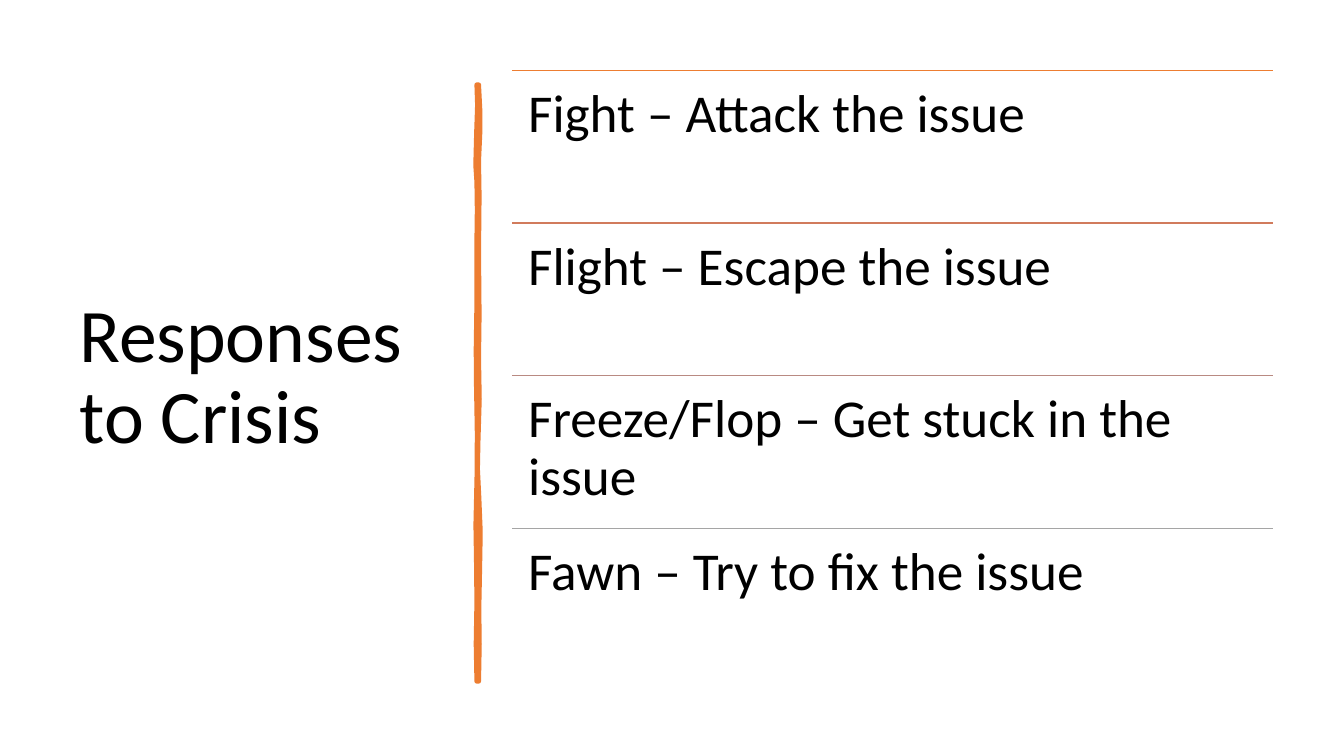
from pptx import Presentation
from pptx.dml.color import RGBColor as Rgb
from pptx.enum.shapes import MSO_CONNECTOR as Link
from pptx.enum.text import MSO_ANCHOR as Anchor
from pptx.oxml.ns import qn
from pptx.util import Pt
from lxml.etree import SubElement as Sub

HUES = {"black": "000000", "bar": "ED7D31"}
FONT = "Calibri"
TITLE = "Responses to Crisis"
ITEMS = [
    ("Fight – Attack the issue", "ED7D31"),
    ("Flight – Escape the issue", "D17B5C"),
    ("Freeze/Flop – Get stuck in the issue", "B98A82"),
    ("Fawn – Try to fix the issue", "A5A5A5"),
]
RIGHT = [(342, 60.5), (343, 80), (342.9, 95), (342, 115), (342.4, 140),
         (342, 180), (342.4, 225), (342, 256), (342.5, 285), (341.6, 315),
         (341.2, 335), (342.2, 355), (343.2, 380), (342.8, 405),
         (342.2, 435), (342.5, 460), (342, 486.7)]
LEFT = [(340.5, 486.7), (340, 460), (340.5, 430), (340.2, 400), (339.8, 375),
        (340.6, 340), (340.8, 310), (340.2, 275), (340, 250), (340.5, 216),
        (340.4, 180), (340.8, 150), (340.5, 130), (339.7, 118),
        (340.3, 95), (341, 75), (340.5, 60.5)]
X, TOP, WIDE, STEP = 365.8, 50.4, 543.6, 109


def write(slide, box, text, size, pad, anchor):
    shape = slide.shapes.add_textbox(*map(Pt, box))
    frame = shape.text_frame
    frame.word_wrap = True
    frame.vertical_anchor = anchor
    frame.margin_left = frame.margin_right = Pt(pad[0])
    frame.margin_top = frame.margin_bottom = Pt(pad[1])
    para = frame.paragraphs[0]
    para.line_spacing = 0.9
    run = para.add_run()
    run.text = text
    run.font.name = FONT
    run.font.size = Pt(size)
    run.font.color.rgb = Rgb.from_string(HUES["black"])


def rule(slide, y, hue):
    line = slide.shapes.add_connector(Link.STRAIGHT, Pt(X), Pt(y), Pt(X + WIDE), Pt(y))
    line.line.color.rgb = Rgb.from_string(hue)
    line.line.width = Pt(1)
    Sub(line._element.spPr, qn("a:effectLst"))


def stroke(slide):
    dots = [(Pt(x), Pt(y)) for x, y in RIGHT + LEFT]
    pen = slide.shapes.build_freeform(*dots[0])
    pen.add_line_segments(dots[1:], close=True)
    bar = pen.convert_to_shape()
    bar.shadow.inherit = False
    hue = Rgb.from_string(HUES["bar"])
    bar.fill.solid()
    bar.fill.fore_color.rgb = hue
    bar.line.color.rgb = hue
    bar.line.width = Pt(3.25)
    Sub(bar.line._get_or_add_ln(), qn("a:round"))


def main():
    deck = Presentation()
    deck.slide_width, deck.slide_height = Pt(960), Pt(540)
    slide = deck.slides.add_slide(deck.slide_layouts[6])
    write(slide, (49.7, 50.4, 269.3, 440), TITLE, 54, (7.2, 3.6), Anchor.MIDDLE)
    stroke(slide)
    for i, (text, hue) in enumerate(ITEMS):
        y = TOP + i * STEP
        rule(slide, y, hue)
        write(slide, (X, y, WIDE, STEP), text, 38, (11.4, 11.4), Anchor.TOP)
    deck.save("out.pptx")


if __name__ == "__main__":
    main()
